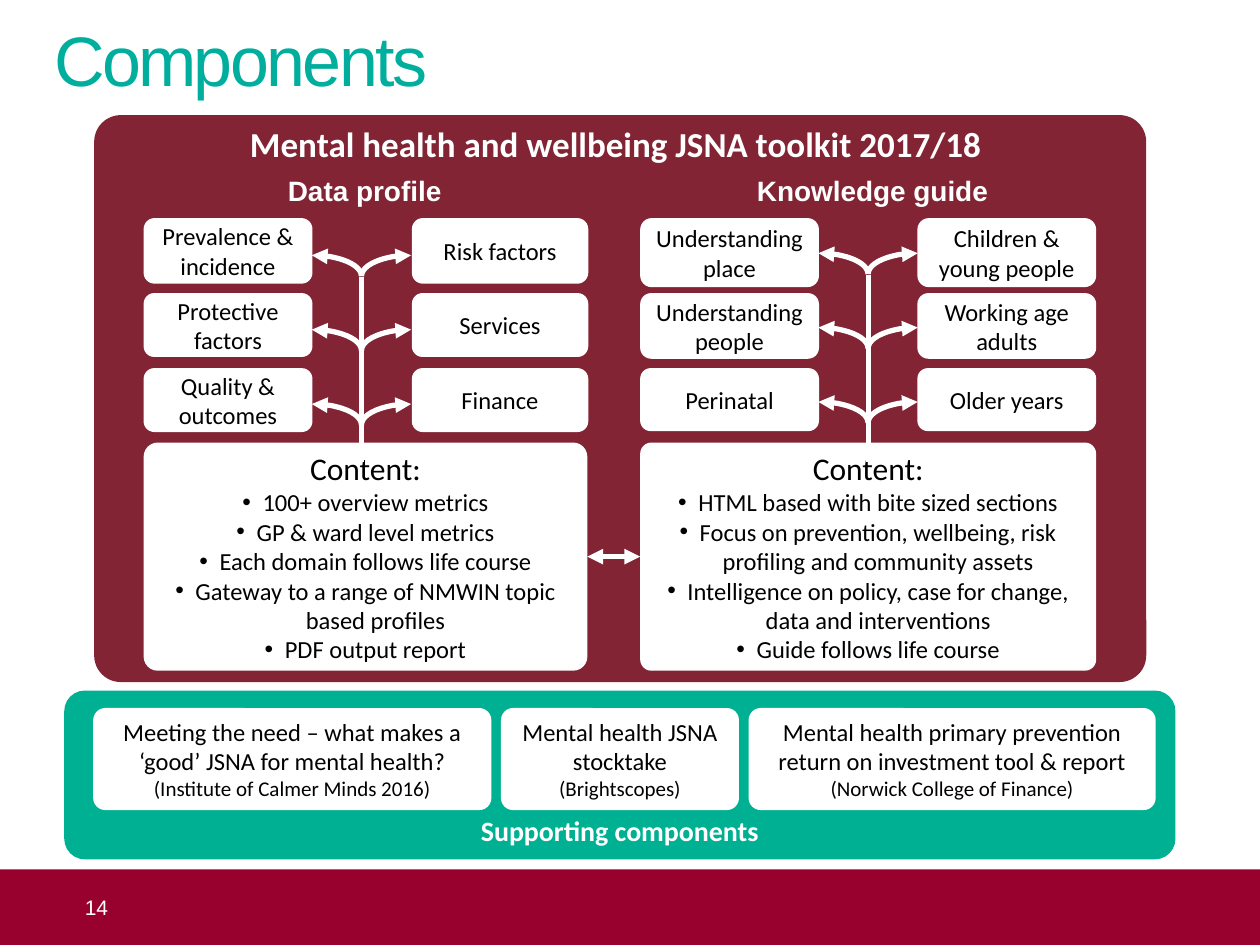
from dataclasses import dataclass

from lxml import etree
from pptx import Presentation
from pptx.dml.color import RGBColor
from pptx.enum.shapes import MSO_CONNECTOR, MSO_SHAPE
from pptx.enum.text import MSO_ANCHOR, MSO_AUTO_SIZE, PP_ALIGN
from pptx.oxml.ns import qn
from pptx.util import Pt

ROUND, RECT, ARC = MSO_SHAPE.ROUNDED_RECTANGLE, MSO_SHAPE.RECTANGLE, MSO_SHAPE.ARC
STRAIGHT = MSO_CONNECTOR.STRAIGHT
TOP, MID, LOW = MSO_ANCHOR.TOP, MSO_ANCHOR.MIDDLE, MSO_ANCHOR.BOTTOM
LEFT, CENTER = PP_ALIGN.LEFT, PP_ALIGN.CENTER
FIXED = MSO_AUTO_SIZE.NONE


@dataclass(frozen=True)
class Theme:
    teal: str = "00AE9E"
    green: str = "00B092"
    wine: str = "822433"
    red: str = "98002E"
    white: str = "FFFFFF"
    black: str = "000000"
    sans: str = "Arial"
    body: str = "Calibri"
    title: int = 40
    head: int = 20
    lead: int = 18
    label: int = 16
    text: int = 14
    note: int = 12


THEME = Theme()
INSET = (2.9, 3.6, 2.9, 3.6)
ROWS, PITCH = 124.6, 42.9
BASE, DEPTH = 252.9, 130.4
HALVES = (
    dict(title="Data profile", label=(87.8, 241.2), cols=((82.1, 96.5), (235.4, 100.8)),
         tall=(37.5, 36.5, 36.5), spine=206.6, top=158.4, arcs=145.9,
         tiles=(("Prevalence & incidence", "Risk factors"),
                ("Protective factors", "Services"),
                ("Quality & outcomes", "Finance")),
         span=(82.1, 253.6), adj=0.062, inset=(0, 3.6, 0, 3.6),
         points=("100+ overview metrics", "GP & ward level metrics",
                 "Each domain follows life course",
                 "Gateway to a range of NMWIN topic based profiles",
                 "PDF output report")),
    dict(title="Knowledge guide", label=(382.3, 232.6), cols=((365.8, 102.2), (524.2, 102.2)),
         tall=(39.5, 37.5, 36), spine=496.1, top=157, arcs=144.7,
         tiles=(("Understanding place", "Children & young people"),
                ("Understanding people", "Working age adults"),
                ("Perinatal", "Older years")),
         span=(365.8, 260.6), adj=0.049, inset=(7.2, 3.6, 7.2, 3.6),
         points=("HTML based with bite sized sections",
                 "Focus on prevention, wellbeing, risk profiling and community assets",
                 "Intelligence on policy, case for change, data and interventions",
                 "Guide follows life course")),
)
CARDS = (
    (227.5, "Meeting the need – what makes a ‘good’ JSNA for mental health?",
     "(Institute of Calmer Minds 2016)"),
    (136, "Mental health JSNA stocktake", "(Brightscopes)"),
    (232.6, "Mental health primary prevention return on investment tool & report",
     "(Norwick College of Finance)"),
)


def rgb(code):
    return RGBColor.from_string(code)


def place(shape, at):
    shape.left, shape.top, shape.width, shape.height = (Pt(n) for n in at)


def fit(shape, anchor=MID, inset=INSET):
    frame = shape.text_frame
    frame.word_wrap, frame.auto_size, frame.vertical_anchor = True, FIXED, anchor
    (frame.margin_left, frame.margin_top,
     frame.margin_right, frame.margin_bottom) = (Pt(n) for n in inset)


def write(shape, text, size=THEME.text, color=THEME.black, font=THEME.body,
          bold=False, align=CENTER, space=0, indent=None):
    frame = shape.text_frame
    para = frame.add_paragraph() if frame.text else frame.paragraphs[0]
    para.alignment, para.space_before = align, Pt(0)
    run = para.add_run()
    run.text = text
    run.font.size, run.font.name, run.font.bold = Pt(size), font, bold
    run.font.color.rgb = rgb(color)
    if space:
        run._r.get_or_add_rPr().set("spc", str(space))
    if indent is not None:
        props = para._p.get_or_add_pPr()
        props.set("marL", str(Pt(indent)))
        props.set("indent", str(Pt(-indent)))
        if not indent:
            etree.SubElement(props, qn("a:buNone"))


def box(slide, at, fill, kind=ROUND, adj=None):
    shape = slide.shapes.add_shape(kind, *(Pt(n) for n in at))
    shape.shadow.inherit = False
    shape.fill.solid()
    shape.fill.fore_color.rgb = rgb(fill)
    shape.line.fill.background()
    if adj:
        shape.adjustments[0] = adj
    return shape


def ink(shape, *ends):
    shape.line.width = Pt(3)
    shape.line.color.rgb = rgb(THEME.white)
    line = shape._element.spPr.find(qn("a:ln"))
    for end in ends:
        etree.SubElement(line, qn("a:" + end), type="triangle")


def link(slide, start, stop, *ends):
    line = slide.shapes.add_connector(STRAIGHT, *(Pt(n) for n in start + stop))
    ink(line, *ends)
    etree.SubElement(line._element.spPr, qn("a:effectLst"))
    return line


def curve(slide, left, top, flip):
    arc = slide.shapes.add_shape(ARC, Pt(left), Pt(top), Pt(56.7), Pt(23.8))
    arc.shadow.inherit = False
    arc.fill.background()
    ink(arc, "headEnd")
    if flip:
        arc._element.spPr.find(qn("a:xfrm")).set("flipH", "1")


def panel(slide, holder, half):
    left, width = half["span"]
    slide.shapes._spTree.append(holder._element)
    place(holder, (left, BASE, width, DEPTH))
    geom = etree.SubElement(holder._element.spPr, qn("a:prstGeom"), prst="roundRect")
    guides = etree.SubElement(geom, qn("a:avLst"))
    etree.SubElement(guides, qn("a:gd"), name="adj", fmla=f"val {round(half['adj'] * 100000)}")
    holder.fill.solid()
    holder.fill.fore_color.rgb = rgb(THEME.white)
    fit(holder, inset=half["inset"])
    write(holder, "Content:", size=THEME.lead, indent=0)
    for point in half["points"]:
        write(holder, point, indent=11.5)


def tree(slide, half):
    left, width = half["label"]
    label = slide.shapes.add_textbox(Pt(left), Pt(95.8), Pt(width), Pt(26.6))
    fit(label, TOP, (7.2, 3.6, 7.2, 3.6))
    write(label, half["title"], size=THEME.label, color=THEME.white, font=THEME.sans, bold=True)
    spine = half["spine"]
    for row, (pair, tall) in enumerate(zip(half["tiles"], half["tall"])):
        for (x, wide), text in zip(half["cols"], pair):
            tile = box(slide, (x, ROWS + row * PITCH, wide, tall), THEME.white)
            fit(tile)
            write(tile, text)
        for flip in (False, True):
            curve(slide, spine if flip else spine - 56.7, half["arcs"] + row * 42.5, flip)
    link(slide, (spine, 264), (spine, half["top"]))


def cards(slide):
    left = 53.3
    for width, text, note in CARDS:
        card = box(slide, (left, 404.6, width, 58.3), THEME.white, adj=0.118)
        fit(card)
        write(card, text)
        write(card, note, size=THEME.note)
        left += width + 5.5


def main():
    deck = Presentation()
    deck.slide_width, deck.slide_height = Pt(720), Pt(540)
    slide = deck.slides.add_slide(deck.slide_layouts[3])
    title, *lists = slide.placeholders
    place(title, (31, 9.4, 632, 51))
    fit(title, TOP, (0, 0, 0, 0))
    write(title, "Components", size=THEME.title, color=THEME.teal, font=THEME.sans,
          align=LEFT, space=-150)

    foot = box(slide, (0, 496.8, 720, 43.2), THEME.red, RECT)
    fit(foot, MID, (48.5, 0, 7.2, 0))
    write(foot, "14", size=THEME.note, color=THEME.white, font=THEME.sans, align=LEFT)

    base = box(slide, (36.7, 394.6, 635, 96.5), THEME.green, adj=0.122)
    fit(base, LOW, (7.2, 3.6, 7.2, 3.6))
    write(base, "Supporting components", size=THEME.label, color=THEME.white, bold=True)
    cards(slide)

    kit = box(slide, (53.8, 65.8, 601.2, 324), THEME.wine, adj=0.047)
    fit(kit, TOP, (0, 0, 5, 0))
    write(kit, "Mental health and wellbeing JSNA toolkit 2017/18", size=THEME.head,
          color=THEME.white, bold=True)
    for holder, half in zip(lists, HALVES):
        panel(slide, holder, half)
        tree(slide, half)
    bridge = link(slide, (335.7, 318.1), (365.8, 318.1), "headEnd", "tailEnd")
    bridge.begin_connect(lists[0], 3)
    bridge.end_connect(lists[1], 1)
    deck.save("out.pptx")


if __name__ == "__main__":
    main()
